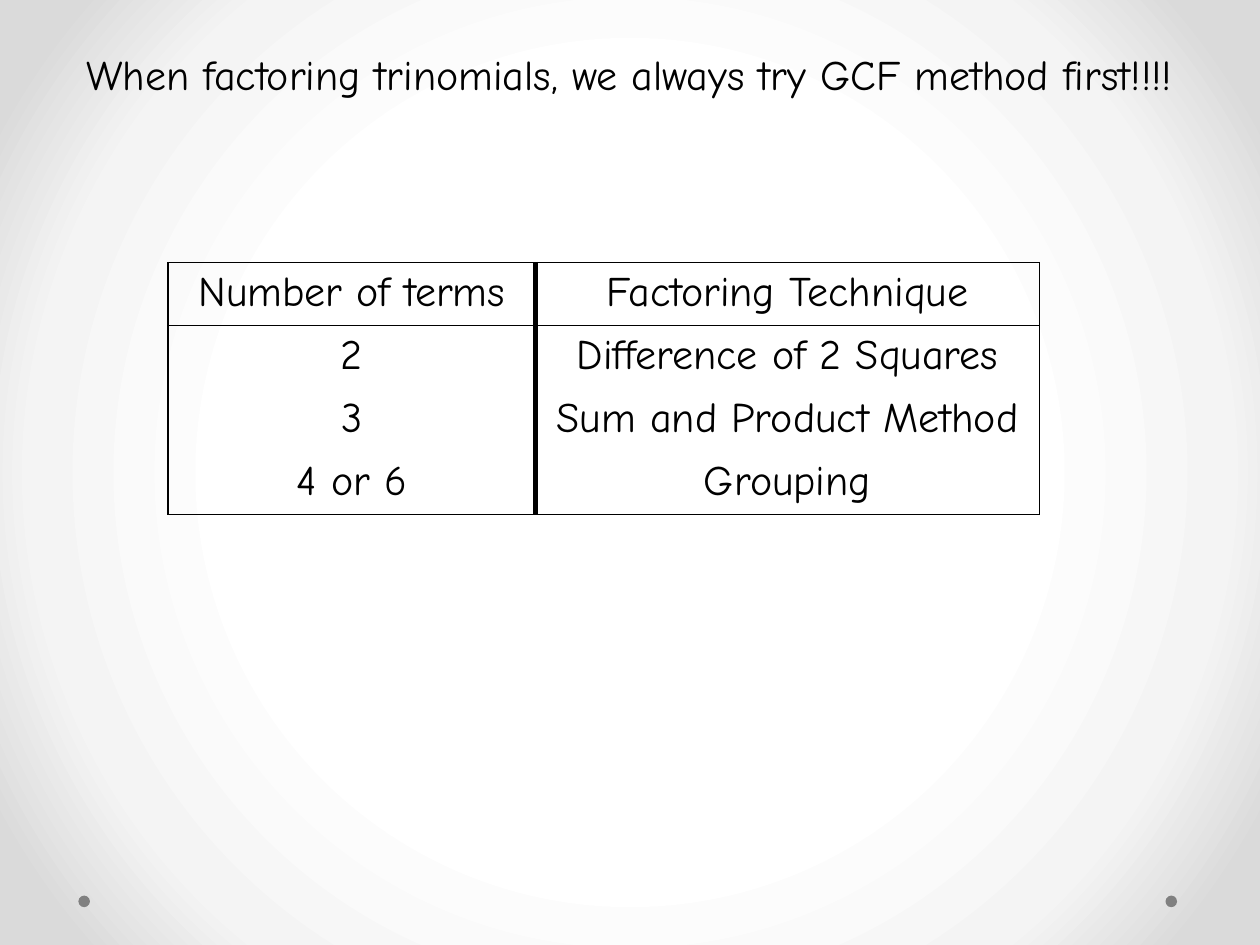
"""Build a slide that matches the number of terms to a factoring technique."""
import pptx
import pptx.dml.color
import pptx.enum.shapes
import pptx.enum.text
import pptx.oxml
import pptx.oxml.ns
import pptx.util

Pt = pptx.util.Pt
BLACK = pptx.dml.color.RGBColor(0x00, 0x00, 0x00)
GRAY = pptx.dml.color.RGBColor(0x80, 0x80, 0x80)
FONT = "Comic Neue"
GRADIENT = [(50, "FFFFFF"), (76, "F4F4F4"), (92, "DADADA")]
ROWS = [
    ("Number of terms", "Factoring Technique"),
    ("2", "Difference of 2 Squares"),
    ("3", "Sum and Product Method"),
    ("4 or 6", "Grouping"),
]
COLUMN_WIDTHS = [210, 288]
ROW_HEIGHT = 36
THIN, THICK = 0.75, 3


def format_text(p, alignment):
    p.alignment = alignment
    p.font.name = FONT
    p.font.size = Pt(24)
    p.font.color.rgb = BLACK


def set_border(cell, side, width):
    fill = f'<a:solidFill><a:srgbClr val="{BLACK}"/></a:solidFill>' if width else "<a:noFill/>"
    ln = pptx.oxml.parse_xml(
        f'<a:{side} {pptx.oxml.ns.nsdecls("a")} w="{Pt(width)}">{fill}</a:{side}>'
    )
    cell._tc.get_or_add_tcPr().append(ln)


prs = pptx.Presentation()
prs.slide_width, prs.slide_height = Pt(720), Pt(540)
s = prs.slides.add_slide(prs.slide_layouts[5])

stops = "".join(
    f'<a:gs pos="{pos * 1000}"><a:srgbClr val="{color}"/></a:gs>' for pos, color in GRADIENT
)
bg = pptx.oxml.parse_xml(
    f'<p:bg {pptx.oxml.ns.nsdecls("p", "a")}><p:bgPr><a:gradFill rotWithShape="1">'
    f'<a:gsLst>{stops}</a:gsLst><a:path path="circle">'
    '<a:fillToRect l="50000" t="50000" r="50000" b="50000"/></a:path>'
    "</a:gradFill><a:effectLst/></p:bgPr></p:bg>"
)
s._element.cSld.insert(0, bg)

for left in (44.8, 666):
    sp = s.shapes.add_shape(
        pptx.enum.shapes.MSO_SHAPE.OVAL, Pt(left), Pt(511.8), Pt(6.6), Pt(6.6)
    )
    sp.shadow.inherit = False
    sp.fill.solid()
    sp.fill.fore_color.rgb = GRAY
    sp.line.fill.background()

title = s.shapes.title
title.left, title.top, title.width, title.height = Pt(42), Pt(24), Pt(642), Pt(65.5)
tf = title.text_frame
tf.text = "When factoring trinomials, we always try GCF method first!!!!"
tf.word_wrap = True
tf.auto_size = pptx.enum.text.MSO_AUTO_SIZE.NONE
tf.vertical_anchor = pptx.enum.text.MSO_ANCHOR.TOP
format_text(tf.paragraphs[0], pptx.enum.text.PP_ALIGN.LEFT)

table = s.shapes.add_table(
    len(ROWS), len(COLUMN_WIDTHS), Pt(96), Pt(150),
    Pt(sum(COLUMN_WIDTHS)), Pt(ROW_HEIGHT * len(ROWS)),
).table
table.first_row = table.horz_banding = False
for column, width in zip(table.columns, COLUMN_WIDTHS):
    column.width = Pt(width)

for i, row in enumerate(ROWS):
    table.rows[i].height = Pt(ROW_HEIGHT)
    for j, text in enumerate(row):
        cell = table.cell(i, j)
        cell.text = text
        format_text(cell.text_frame.paragraphs[0], pptx.enum.text.PP_ALIGN.CENTER)
        set_border(cell, "lnL", THICK if j else THIN)
        set_border(cell, "lnR", THIN if j else THICK)
        set_border(cell, "lnT", THIN if i < 2 else 0)
        set_border(cell, "lnB", THIN if i in (0, len(ROWS) - 1) else 0)
        cell.fill.background()

prs.save("out.pptx")
